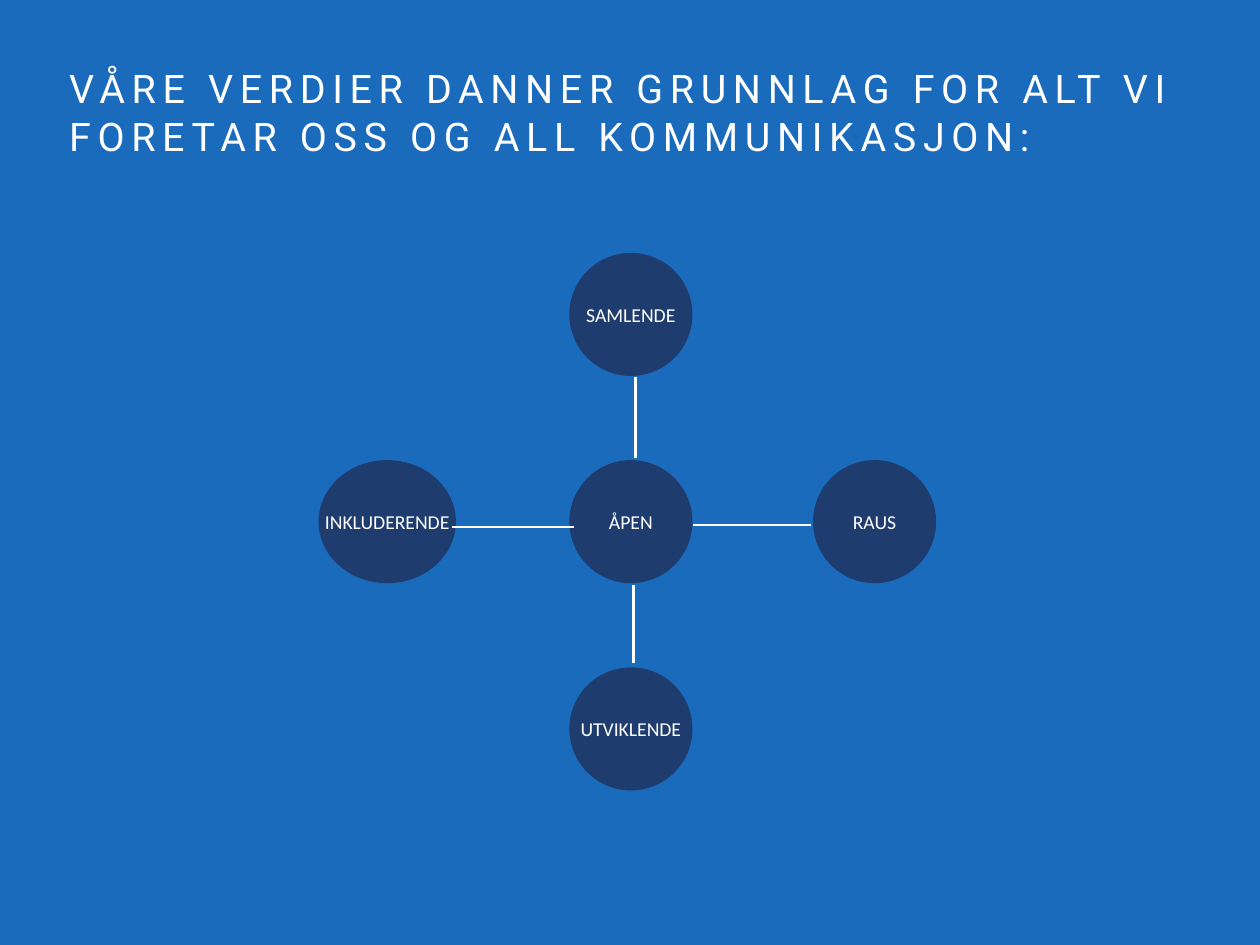
import pptx
import pptx.dml.color
import pptx.enum.shapes
import pptx.enum.text
import pptx.util
from pptx.util import Inches

BLUE, NAVY, WHITE = "1B6BBC", "1E3C6E", "FFFFFF"
HUB_X, HUB_Y = 7.12, 5.89
STEP_X, STEP_Y = 2.75, 2.34
SIZE = 1.39

# Word, column and row from the hub, circle width, label width
VALUES = [
    ("ÅPEN", 0, 0, SIZE, 1.33),
    ("SAMLENDE", 0, -1, SIZE, 1.14),
    ("UTVIKLENDE", 0, 1, SIZE, 1.27),
    ("RAUS", 1, 0, SIZE, 0.61),
    ("INKLUDERENDE", -1, 0, 1.55, 1.55),
]

# Start and end of each link
LINKS = [
    (6.48, 5.95, 5.1, 5.95),
    (9.15, 5.93, 7.82, 5.93),
    (7.17, 5.17, 7.17, 4.26),
    (7.15, 7.49, 7.15, 6.6),
]


def color(code):
    return pptx.dml.color.RGBColor.from_string(code)


def add_text(slide, words, left, top, width, height, font, size):
    box = slide.shapes.add_textbox(
        Inches(left), Inches(top), Inches(width), Inches(height))
    frame = box.text_frame
    frame.margin_left = frame.margin_right = Inches(0.06)
    frame.margin_top = frame.margin_bottom = Inches(0.06)
    run = frame.paragraphs[0].add_run()
    run.text = words
    run.font.name = font
    run.font.size = pptx.util.Pt(size)
    run.font.color.rgb = color(WHITE)
    return frame, run


def add_title(slide, words):
    frame, run = add_text(slide, words, 0.72, 0.67, 12.78, 1.56, "Roboto", 32)
    frame.word_wrap = True
    # Letter spacing in hundredths of a point
    run.font._element.set("spc", "540")


def add_circle(slide, x, y, width):
    circle = slide.shapes.add_shape(
        pptx.enum.shapes.MSO_SHAPE.OVAL,
        Inches(x - width / 2), Inches(y - SIZE / 2),
        Inches(width), Inches(SIZE))
    circle.shadow.inherit = False
    circle.fill.solid()
    circle.fill.fore_color.rgb = color(NAVY)
    circle.line.fill.background()


def add_link(slide, ends):
    link = slide.shapes.add_connector(
        pptx.enum.shapes.MSO_CONNECTOR.STRAIGHT, *map(Inches, ends))
    link.line.color.rgb = color(WHITE)
    link.line.width = pptx.util.Pt(2)
    link._element.spPr.append(pptx.oxml.xmlchemy.OxmlElement("a:effectLst"))


def add_label(slide, word, x, y, width):
    height = 0.38
    frame, _ = add_text(slide, word, x - width / 2, y - height / 2,
                        width, height, "Calibri", 16)
    frame.word_wrap = False
    frame.auto_size = pptx.enum.text.MSO_AUTO_SIZE.SHAPE_TO_FIT_TEXT
    frame.vertical_anchor = pptx.enum.text.MSO_ANCHOR.MIDDLE
    frame.paragraphs[0].alignment = pptx.enum.text.PP_ALIGN.CENTER


def main():
    deck = pptx.Presentation()
    deck.slide_width = Inches(14.22)
    deck.slide_height = Inches(10.67)
    slide = deck.slides.add_slide(deck.slide_layouts[6])
    slide.background.fill.solid()
    slide.background.fill.fore_color.rgb = color(BLUE)

    add_title(slide, "VÅRE VERDIER DANNER GRUNNLAG FOR ALT VI "
                     "FORETAR OSS OG ALL KOMMUNIKASJON:")

    # Circles lie below the links, labels above
    for _, col, row, width, _ in VALUES:
        add_circle(slide, HUB_X + col * STEP_X, HUB_Y + row * STEP_Y, width)
    for ends in LINKS:
        add_link(slide, ends)
    for word, col, row, _, width in VALUES:
        add_label(slide, word, HUB_X + col * STEP_X,
                  HUB_Y + row * STEP_Y, width)

    deck.save("out.pptx")


if __name__ == "__main__":
    main()
